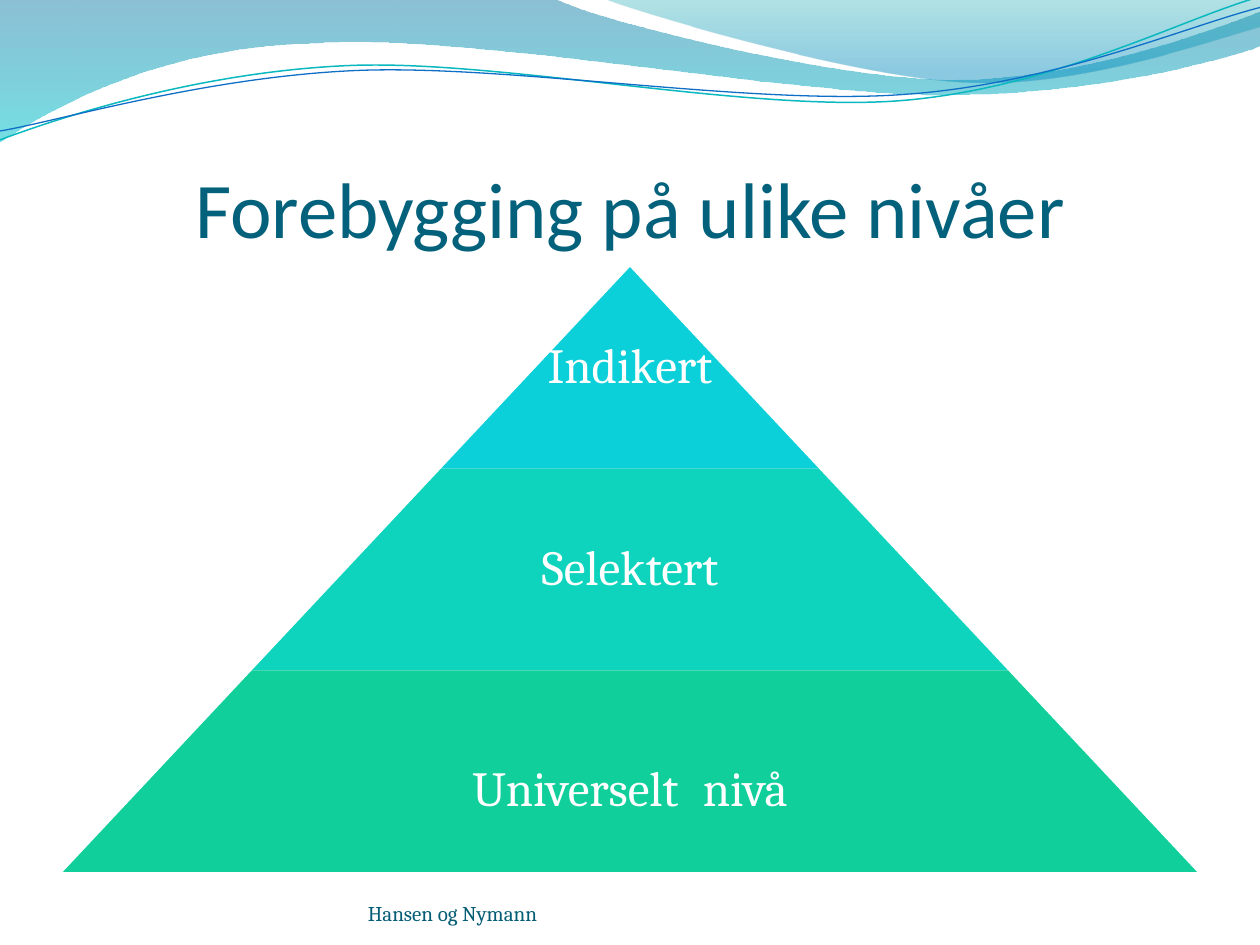
from math import cos, radians, sin

from lxml import etree
from pptx import Presentation
from pptx.dml.color import RGBColor
from pptx.enum.shapes import MSO_SHAPE
from pptx.enum.text import MSO_ANCHOR, PP_ALIGN
from pptx.oxml.ns import qn
from pptx.util import Inches, Pt

TRAPEZOID = MSO_SHAPE.TRAPEZOID
MIDDLE, BOTTOM = MSO_ANCHOR.MIDDLE, MSO_ANCHOR.BOTTOM
LEFT, CENTER = PP_ALIGN.LEFT, PP_ALIGN.CENTER

TITLE = "Forebygging på ulike nivåer"
FOOTER = "Hansen og Nymann"
LEVELS = [
    ([("Indikert", 28)], "0BD0D9", 3),
    ([("Selektert", 28)], "0ED4BD", 3.9),
    ([("Universelt", 28), (" ", 63), ("nivå", 28)], "10CF9B", 5.85),
]
APEX_X, APEX_Y = 5, 2.12
LEVEL_HEIGHT, LEVEL_STEP = 1.6, 3

# Each wave: start point, then lines (x, y) or Bezier curves (two controls, end).
BANDS = [
    ([(0, 0), (4.4, -0.01),
      (4.76, 0.17, 6.64, 0.63, 7.58, 0.63), (8.53, 0.63, 9.58, 0.26, 10, 0.09),
      (10.01, 0.36),
      (9.83, 0.44, 8.7, 0.76, 7.46, 0.75), (6.22, 0.75, 3.82, 0.28, 2.57, 0.34),
      (1.29, 0.36, 0.46, 0.83, -0.01, 1.13)],
     [(0, "0074A1", 45), (1, "00C6CF", 55)]),
    ([(4.79, -0.01),
      (5.09, 0.11, 6.82, 0.62, 7.69, 0.65), (8.56, 0.69, 9.61, 0.32, 10, 0.21),
      (10, 0)],
     [(0, "00A1A9", 30), (0.8, "008BBF", 45)]),
]
STRANDS = [
    ([(0, 1.11),
      (0.48, 0.93, 1.58, 0.57, 2.77, 0.52), (3.95, 0.47, 5.93, 0.89, 7.13, 0.8),
      (8.33, 0.71, 9.38, 0.15, 9.98, -0.02)], (4.99, 0.58), "0AB8BF", 0.85),
    ([(0, 1.04),
      (0.47, 0.96, 1.64, 0.61, 2.83, 0.56), (4.03, 0.51, 5.97, 0.84, 7.17, 0.75),
      (8.36, 0.67, 9.41, 0.21, 10, 0.06)], (5, 0.59), "0F6FC6", 0.75),
]
STRAND_TILT = 2.7


def color(value):
    return RGBColor.from_string(value)


def pairs(segment):
    return list(zip(segment[::2], segment[1::2]))


def level_out(segment, center):
    cx, cy = center
    c, s = cos(radians(STRAND_TILT)), sin(radians(STRAND_TILT))
    return [value for x, y in pairs(segment)
            for value in (cx + (x - cx) * c - (y - cy) * s,
                          cy + (x - cx) * s + (y - cy) * c)]


def add_wave(slide, segments, close):
    points = [(Inches(x), Inches(y)) for segment in segments for x, y in pairs(segment)]
    builder = slide.shapes.build_freeform(*points[0])
    builder.add_line_segments(points[1:], close=close)
    wave = builder.convert_to_shape()
    wave.shadow.inherit = False
    steps = iter(list(wave._element.spPr.iter(qn("a:lnTo"))))
    for segment in segments[1:]:
        first = next(steps)
        if len(segment) == 6:
            first.tag = qn("a:cubicBezTo")
            for _ in range(2):
                control = next(steps)
                first.append(control[0])
                control.getparent().remove(control)
    return wave


def add_band(slide, segments, stops):
    band = add_wave(slide, segments, True)
    band.line.fill.background()
    band.fill.gradient()
    band.fill.gradient_angle = 270
    for stop, (position, tint, _) in zip(band.fill.gradient_stops, stops):
        stop.position = position
        stop.color.rgb = color(tint)
    for tint, (_, _, opacity) in zip(band._element.spPr.iter(qn("a:srgbClr")), stops):
        etree.SubElement(tint, qn("a:alpha"), val=str(opacity * 1000))


def add_strand(slide, segments, center, tint, width):
    strand = add_wave(slide, [level_out(segment, center) for segment in segments], False)
    strand.rotation = 360 - STRAND_TILT
    strand.fill.background()
    strand.line.color.rgb = color(tint)
    strand.line.width = Pt(width)


def add_text(slide, box, runs, font, tint, align, anchor, insets=(0, 0, 0, 0), spacing=1):
    frame = slide.shapes.add_textbox(*map(Inches, box)).text_frame
    frame.word_wrap = True
    frame.vertical_anchor = anchor
    (frame.margin_left, frame.margin_top,
     frame.margin_right, frame.margin_bottom) = map(Inches, insets)
    paragraph = frame.paragraphs[0]
    paragraph.alignment = align
    paragraph.line_spacing = spacing
    paragraph.font.name = font
    paragraph.font.color.rgb = color(tint)
    for words, size in runs:
        run = paragraph.add_run()
        run.text = words
        run.font.size = Pt(size)


def add_level(slide, index, runs, tint, text_width):
    width = LEVEL_STEP * (index + 1)
    top = APEX_Y + LEVEL_HEIGHT * index
    level = slide.shapes.add_shape(
        TRAPEZOID, Inches(APEX_X - width / 2), Inches(top), Inches(width), Inches(LEVEL_HEIGHT))
    level.adjustments[0] = LEVEL_STEP / 2 / LEVEL_HEIGHT
    level.shadow.inherit = False
    level.fill.solid()
    level.fill.fore_color.rgb = color(tint)
    level.line.fill.background()
    add_text(slide, (APEX_X - text_width / 2, top, text_width, LEVEL_HEIGHT), runs,
             "Cambria", "FFFFFF", CENTER, MIDDLE, (0.04,) * 4, 0.9)


def main():
    deck = Presentation()
    deck.slide_width, deck.slide_height = Inches(10), Inches(7.5)
    slide = deck.slides.add_slide(deck.slide_layouts[6])
    for band in BANDS:
        add_band(slide, *band)
    for strand in STRANDS:
        add_strand(slide, *strand)
    add_text(slide, (0.5, 0.77, 9, 1.25), [(TITLE, 45)],
             "Calibri", "04617B", CENTER, BOTTOM, (0, 0.05, 0, 0))
    for index, level in enumerate(LEVELS):
        add_level(slide, index, *level)
    add_text(slide, (2.92, 6.95, 3.67, 0.4), [(FOOTER, 12)],
             "Cambria", "045D75", LEFT, BOTTOM)
    deck.save("out.pptx")


if __name__ == "__main__":
    main()
